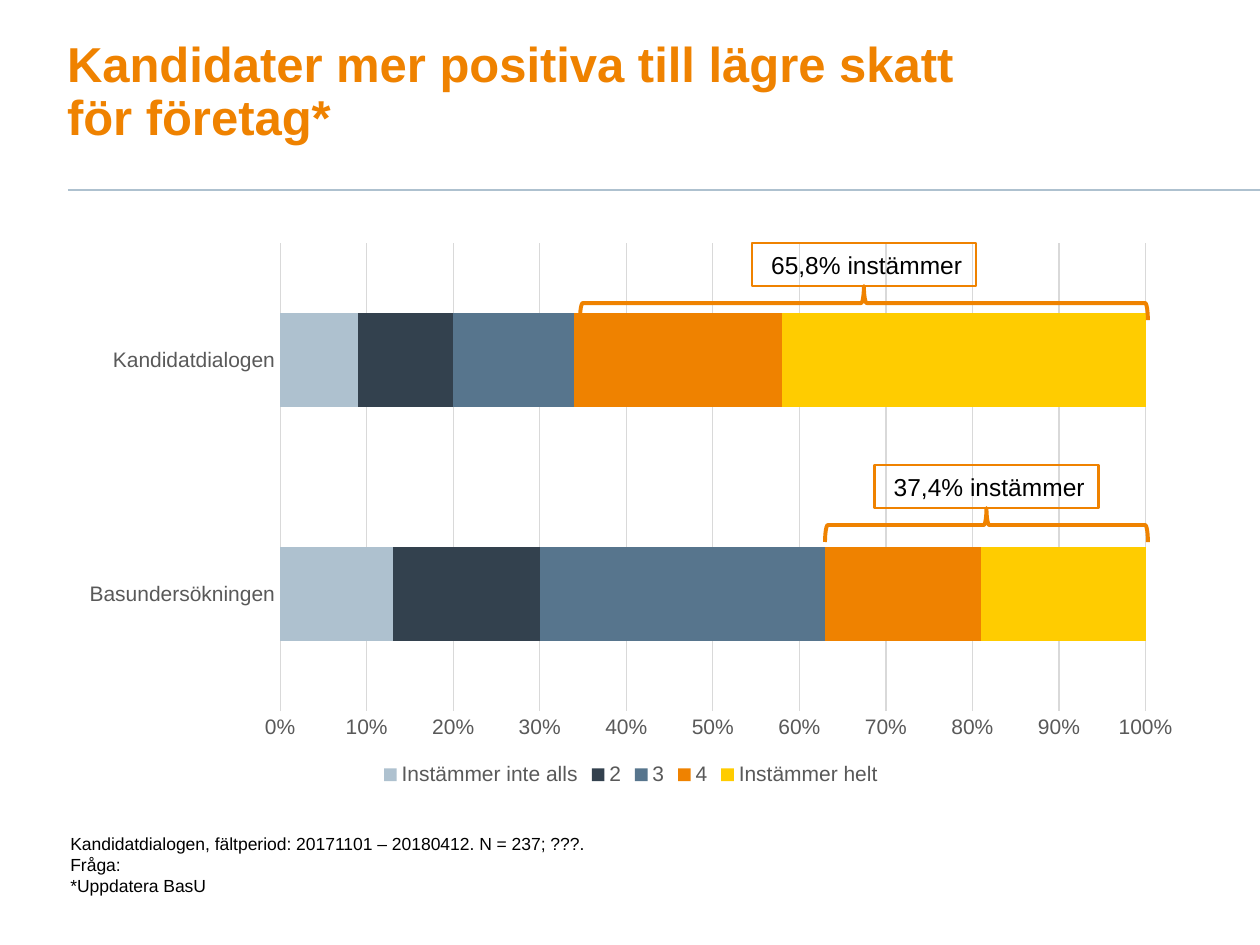
from dataclasses import dataclass

import pptx
import pptx.chart.data
import pptx.dml.color
import pptx.enum.chart
import pptx.enum.shapes
import pptx.enum.text
import pptx.oxml
import pptx.oxml.ns
import pptx.util

RGBColor = pptx.dml.color.RGBColor
ORANGE = RGBColor(0xEF, 0x82, 0x00)
YELLOW = RGBColor(0xFF, 0xCC, 0x00)
PALE = RGBColor(0xAE, 0xC1, 0xCF)
NAVY = RGBColor(0x33, 0x41, 0x4E)
STEEL = RGBColor(0x57, 0x75, 0x8D)
BLACK = RGBColor(0x00, 0x00, 0x00)
GRAY = RGBColor(0x59, 0x59, 0x59)
GRID = RGBColor(0xD9, 0xD9, 0xD9)
FONT = "Arial"
SCALE = 914400 / 126


@dataclass(frozen=True)
class Series:
    name: str
    values: tuple[int, int]
    color: RGBColor


@dataclass(frozen=True)
class Mark:
    text: str
    left: int
    top: int


SERIES = (
    Series("Instämmer inte alls", (13, 9), PALE),
    Series("2", (17, 11), NAVY),
    Series("3", (33, 14), STEEL),
    Series("4", (18, 24), ORANGE),
    Series("Instämmer helt", (19, 42), YELLOW),
)
MARKS = (
    Mark(" 65,8% instämmer", 580, 243),
    Mark(" 37,4% instämmer", 825, 465),
)
NOTES = (
    "Kandidatdialogen, fältperiod: 20171101 – 20180412. N = 237; ???.",
    "Fråga:",
    "*Uppdatera BasU",
)
RIGHT = 1148
BOX_W, BOX_H = 224, 43
BRACE_H = 34


def px(*sizes: float) -> list[pptx.util.Emu]:
    return [pptx.util.Emu(round(size * SCALE)) for size in sizes]


def style(font, size: int, color: RGBColor, bold: bool = False) -> None:
    font.name = FONT
    font.size = pptx.util.Pt(size)
    font.bold = bold
    font.color.rgb = color


def write(para, text: str, size: int, color: RGBColor, bold: bool = False) -> None:
    run = para.add_run()
    run.text = text
    style(run.font, size, color, bold)


def stroke(line, color: RGBColor, width: float) -> None:
    line.color.rgb = color
    line.width = pptx.util.Pt(width)


def add_title(slide) -> None:
    title = slide.shapes.title
    title.left, title.top, title.width, title.height = px(67, 39, 902, 113)
    frame = title.text_frame
    frame.word_wrap = True
    frame.auto_size = pptx.enum.text.MSO_AUTO_SIZE.NONE
    frame.vertical_anchor = pptx.enum.text.MSO_ANCHOR.BOTTOM
    frame.margin_left = frame.margin_top = 0
    para = frame.paragraphs[0]
    para.alignment = pptx.enum.text.PP_ALIGN.LEFT
    para.line_spacing = 0.9
    write(para, "Kandidater mer positiva till lägre skatt för företag*", 28, ORANGE, True)


def add_rule(slide) -> None:
    rule = slide.shapes.add_connector(
        pptx.enum.shapes.MSO_CONNECTOR.STRAIGHT, *px(68, 190, 1260, 190))
    stroke(rule.line, PALE, 1)
    props = rule._element.spPr
    props.append(pptx.oxml.parse_xml(
        f"<a:effectLst {pptx.oxml.ns.nsdecls('a')}/>"))


def add_chart(slide) -> None:
    data = pptx.chart.data.CategoryChartData()
    data.categories = ["Basundersökningen", "Kandidatdialogen"]
    for item in SERIES:
        data.add_series(item.name, item.values)
    chart = slide.shapes.add_chart(
        pptx.enum.chart.XL_CHART_TYPE.BAR_STACKED_100,
        *px(67, 232, 1128, 559), data).chart
    chart.has_title = False
    style(chart.font, 10, BLACK)
    plot = chart.plots[0]
    plot.vary_by_categories = False
    plot.gap_width = 150
    plot.overlap = 100
    for item, bar in zip(SERIES, plot.series):
        bar.format.fill.solid()
        bar.format.fill.fore_color.rgb = item.color
    cats, vals = chart.category_axis, chart.value_axis
    for axis in (cats, vals):
        axis.major_tick_mark = pptx.enum.chart.XL_TICK_MARK.NONE
        axis.minor_tick_mark = pptx.enum.chart.XL_TICK_MARK.NONE
        style(axis.tick_labels.font, 12, GRAY)
    stroke(cats.format.line, GRID, 0.75)
    vals.format.line.fill.background()
    vals.has_major_gridlines = True
    stroke(vals.major_gridlines.format.line, GRID, 0.75)
    vals.tick_labels.number_format = "0%"
    vals.tick_labels.number_format_is_linked = False
    chart.has_legend = True
    chart.legend.position = pptx.enum.chart.XL_LEGEND_POSITION.BOTTOM
    chart.legend.include_in_layout = False
    style(chart.legend.font, 12, GRAY)


def add_notes(slide) -> None:
    frame = slide.shapes.add_textbox(*px(58, 827, 1005, 77)).text_frame
    frame.word_wrap = True
    for index, text in enumerate(NOTES):
        para = frame.add_paragraph() if index else frame.paragraphs[0]
        write(para, text, 10, BLACK)


def add_shape(slide, kind, area: tuple[float, ...], width: float):
    shape = slide.shapes.add_shape(kind, *px(*area))
    shape.shadow.inherit = False
    shape.fill.background()
    stroke(shape.line, ORANGE, width)
    return shape


def add_mark(slide, mark: Mark) -> None:
    kinds = pptx.enum.shapes.MSO_SHAPE
    span = RIGHT - mark.left
    mid = mark.left + span / 2
    level = mark.top + BOX_H + BRACE_H / 2
    area = (mid - BRACE_H / 2, level - span / 2, BRACE_H, span)
    brace = add_shape(slide, kinds.RIGHT_BRACE, area, 2.25)
    brace.rotation = 270
    area = (mid - BOX_W / 2, mark.top, BOX_W, BOX_H)
    box = add_shape(slide, kinds.RECTANGLE, area, 1.5)
    frame = box.text_frame
    frame.word_wrap = False
    frame.vertical_anchor = pptx.enum.text.MSO_ANCHOR.MIDDLE
    para = frame.paragraphs[0]
    para.alignment = pptx.enum.text.PP_ALIGN.LEFT
    write(para, mark.text, 14, BLACK)


def main() -> None:
    deck = pptx.Presentation()
    deck.slide_width, deck.slide_height = px(1260, 945)
    slide = deck.slides.add_slide(deck.slide_layouts[5])
    add_rule(slide)
    add_title(slide)
    add_chart(slide)
    add_notes(slide)
    for mark in MARKS:
        add_mark(slide, mark)
    deck.save("out.pptx")


if __name__ == "__main__":
    main()
